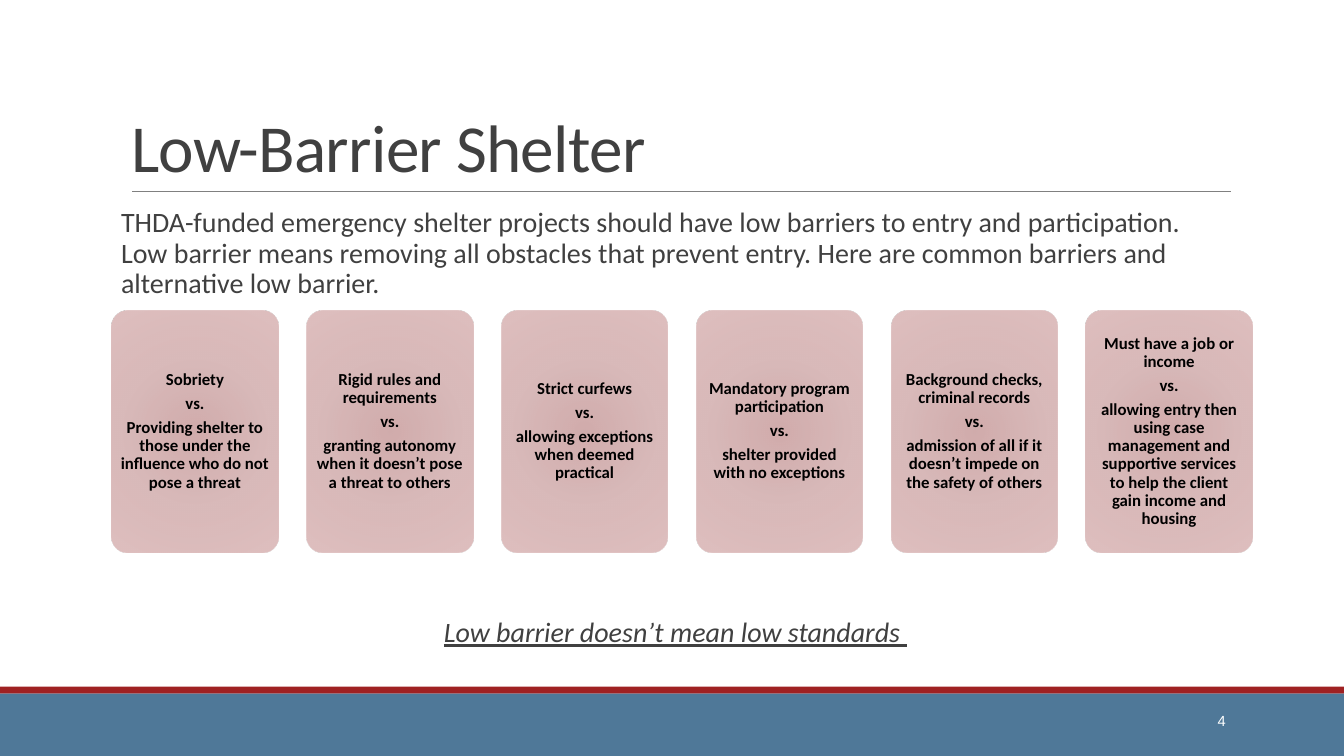
"""Build the Low-Barrier Shelter slide."""
from pptx import Presentation
from pptx.dml.color import RGBColor
from pptx.enum.shapes import MSO_CONNECTOR, MSO_SHAPE
from pptx.enum.text import MSO_ANCHOR, MSO_AUTO_SIZE, PP_ALIGN
from pptx.oxml import parse_xml
from pptx.oxml.ns import nsdecls
from pptx.util import Cm, Pt

BLUE = RGBColor(0x4F, 0x78, 0x98)
RED = RGBColor(0x9F, 0x21, 0x22)
GRAY = RGBColor(0x80, 0x80, 0x80)
DARK = RGBColor(0x40, 0x40, 0x40)
BLACK = RGBColor(0, 0, 0)
WHITE = RGBColor(0xFF, 0xFF, 0xFF)
ROSE_STOPS = [
    (0, RGBColor(0xC6, 0x98, 0x98)),
    (45, RGBColor(0xCF, 0xA8, 0xA8)),
    (100, RGBColor(0xD7, 0xAF, 0xAF)),
]

CARDS = [
    ("Sobriety", "Providing shelter to those under the influence who do not pose a threat"),
    ("Rigid rules and requirements", "granting autonomy when it doesn’t pose a threat to others"),
    ("Strict curfews", "allowing exceptions when deemed practical"),
    ("Mandatory program participation", "shelter provided with no exceptions"),
    ("Background checks, criminal records",
     "admission of all if it doesn’t impede on the safety of others"),
    ("Must have a job or income",
     "allowing entry then using case management and supportive services "
     "to help the client gain income and housing"),
]
INTRODUCTION = (
    "THDA-funded emergency shelter projects should have low barriers to entry and participation. "
    "Low barrier means removing all obstacles that prevent entry. "
    "Here are common barriers and alternative low barrier."
)

TITLE_FONT = {"name": "Calibri", "size": Pt(48)}
BODY_FONT = {"name": "Calibri", "size": Pt(20)}
CLOSING_FONT = {**BODY_FONT, "italic": True, "underline": True}
CARD_FONT = {"name": "Calibri", "size": Pt(12), "bold": True}
NUMBER_FONT = {"name": "Arial", "size": Pt(10.5)}


def write_paragraph(paragraph, text, font, color, layout):
    run = paragraph.add_run()
    run.text = text
    for name, value in font.items():
        setattr(run.font, name, value)
    run.font.color.rgb = color
    for name, value in layout.items():
        setattr(paragraph, name, value)
    return run


def place(shape, left, top, width, height, frame_format):
    shape.left, shape.top, shape.width, shape.height = Cm(left), Cm(top), Cm(width), Cm(height)
    for name, value in {"word_wrap": True, "auto_size": MSO_AUTO_SIZE.NONE, **frame_format}.items():
        setattr(shape.text_frame, name, value)


presentation = Presentation()
presentation.slide_width, presentation.slide_height = Cm(33.87), Cm(19.05)
slide = presentation.slides.add_slide(presentation.slide_layouts[1])
title, body = slide.placeholders

rule = slide.shapes.add_connector(MSO_CONNECTOR.STRAIGHT, Cm(3.33), Cm(4.82), Cm(31.01), Cm(4.82))
rule.line.color.rgb = GRAY
rule.line.width = Pt(0.5)
rule._element.spPr.append(parse_xml(f"<a:effectLst {nsdecls('a')}/>"))

for top, height, color in [(17.3, 0.18, RED), (17.48, 1.57, BLUE)]:
    band = slide.shapes.add_shape(
        MSO_SHAPE.RECTANGLE, 0, Cm(top), presentation.slide_width, Cm(height))
    band.fill.solid()
    band.fill.fore_color.rgb = color
    band.line.fill.background()
    band.shadow.inherit = False

place(title, 3.05, 0.79, 27.94, 4.04, {"vertical_anchor": MSO_ANCHOR.BOTTOM})
title_run = write_paragraph(
    title.text_frame.paragraphs[0], "Low-Barrier Shelter", TITLE_FONT, DARK,
    {"alignment": PP_ALIGN.LEFT, "line_spacing": 0.85})
title_run.font._element.set("spc", "-50")

place(body, 3.05, 5.13, 27.94, 11.81, {
    "margin_left": 0, "margin_right": 0, "vertical_anchor": MSO_ANCHOR.TOP})
body_paragraphs = [
    (INTRODUCTION, BODY_FONT, PP_ALIGN.LEFT, Pt(0)),
    ("Low barrier doesn’t mean low standards ", CLOSING_FONT, PP_ALIGN.CENTER, Pt(226)),
]
for index, (text, font, alignment, space_before) in enumerate(body_paragraphs):
    paragraph = body.text_frame.add_paragraph() if index else body.text_frame.paragraphs[0]
    properties = paragraph._element.get_or_add_pPr()
    properties.set("marL", "0")
    properties.set("indent", "0")
    properties.append(parse_xml(f"<a:buNone {nsdecls('a')}/>"))
    write_paragraph(paragraph, text, font, DARK, {
        "alignment": alignment, "line_spacing": 0.9,
        "space_before": space_before, "space_after": Pt(2)})

stops = "".join(
    f'<a:gs pos="{position * 1000}"><a:srgbClr val="{color}"><a:alpha val="80000"/></a:srgbClr></a:gs>'
    for position, color in ROSE_STOPS)
card_fill = (
    f'<a:gradFill {nsdecls("a")} rotWithShape="1"><a:gsLst>{stops}</a:gsLst><a:path path="circle">'
    '<a:fillToRect l="50000" t="50000" r="50000" b="50000"/></a:path></a:gradFill>')
card_margins = {f"margin_{side}": Cm(0.1) for side in ("left", "top", "right", "bottom")}

for column, (barrier, alternative) in enumerate(CARDS):
    card = slide.shapes.add_shape(MSO_SHAPE.ROUNDED_RECTANGLE, 0, 0, Cm(4.19), Cm(6.1))
    place(card, 2.82 + 4.91 * column, 7.82, 4.19, 6.1, {
        **card_margins, "vertical_anchor": MSO_ANCHOR.MIDDLE})
    card.adjustments[0] = 0.1
    card._element.spPr.insert(2, parse_xml(card_fill))
    card.line.fill.background()
    card.shadow.inherit = False
    for index, text in enumerate((barrier, "vs.", alternative)):
        paragraph = card.text_frame.add_paragraph() if index else card.text_frame.paragraphs[0]
        write_paragraph(paragraph, text, CARD_FONT, BLACK, {
            "alignment": PP_ALIGN.CENTER, "line_spacing": 0.9, "space_after": Pt(4.2)})

slide_number = slide.shapes.add_textbox(0, 0, Cm(3.63), Cm(1.02))
place(slide_number, 27.51, 17.65, 3.63, 1.02, {"vertical_anchor": MSO_ANCHOR.MIDDLE})
write_paragraph(slide_number.text_frame.paragraphs[0], "4", NUMBER_FONT, WHITE, {
    "alignment": PP_ALIGN.RIGHT})

presentation.save("out.pptx")
